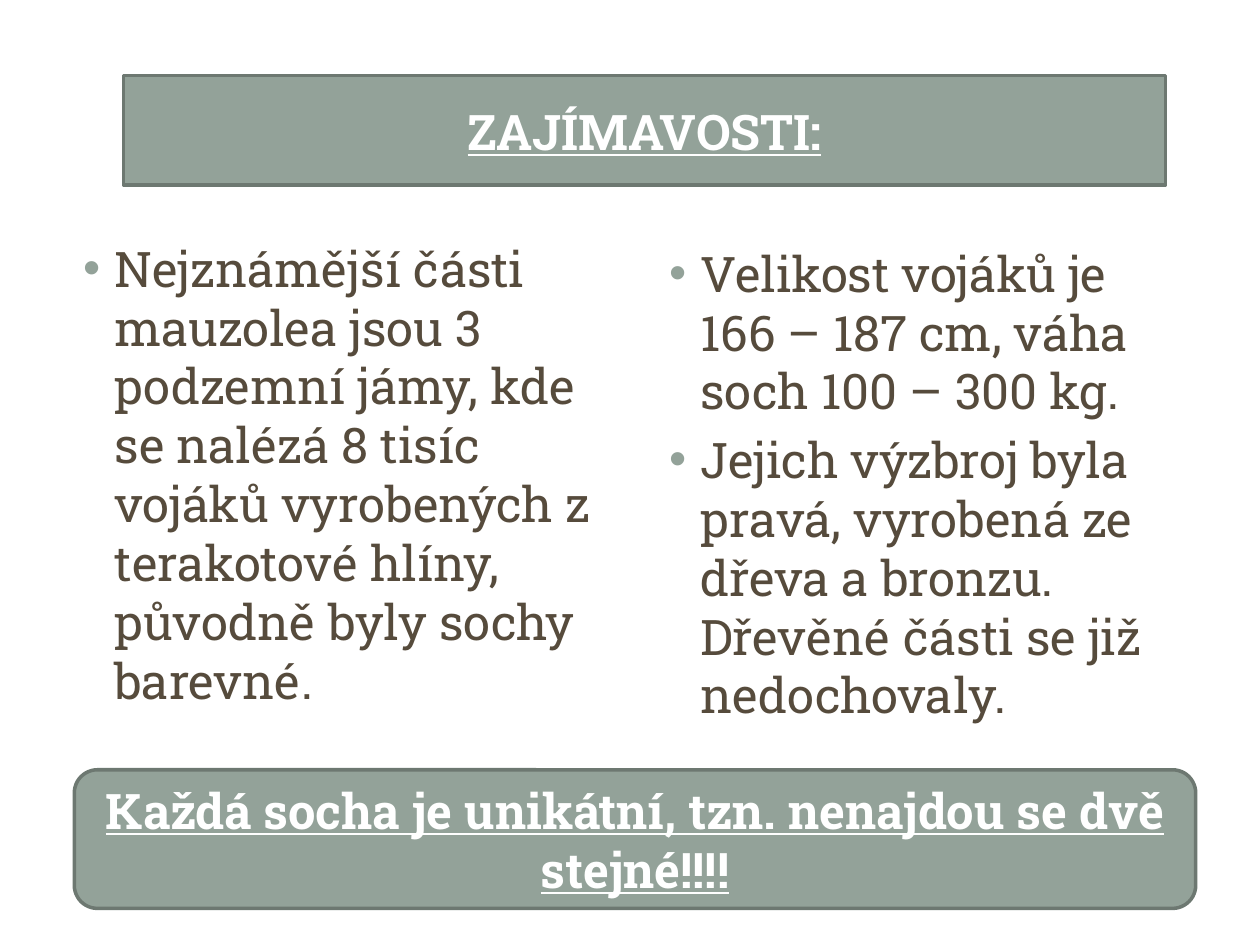
from lxml import etree
from pptx import Presentation
from pptx.dml.color import RGBColor
from pptx.enum.shapes import MSO_SHAPE
from pptx.enum.text import MSO_ANCHOR, MSO_AUTO_SIZE, PP_ALIGN
from pptx.oxml.ns import qn
from pptx.util import Inches, Pt

ROUNDED = MSO_SHAPE.ROUNDED_RECTANGLE
MIDDLE, TOP = MSO_ANCHOR.MIDDLE, MSO_ANCHOR.TOP
CENTER, LEFT = PP_ALIGN.CENTER, PP_ALIGN.LEFT
NO_AUTOFIT = MSO_AUTO_SIZE.NONE

FONT = "Roboto Slab"
SAGE, SAGE_DARK, BROWN, WHITE = "93A299", "6D7871", "564B3C", "FFFFFF"

TITLE_BOX = (0.98, 0.6, 8.27, 0.87)
LEFT_BOX = (0.43, 1.84, 4.42, 4.82)
RIGHT_BOX = (5.08, 1.88, 4.42, 4.82)
CONCLUSION_BOX = (0.59, 6.11, 8.9, 1.1)

LEFT_FACTS = [
    "Nejznámější části mauzolea jsou 3 podzemní jámy, kde se nalézá 8 tisíc "
    "vojáků vyrobených z terakotové hlíny, původně byly sochy barevné.",
]
RIGHT_FACTS = [
    "Velikost vojáků je 166 – 187 cm, váha soch 100 – 300 kg.",
    "Jejich výzbroj byla pravá, vyrobená ze dřeva a bronzu. "
    "Dřevěné části se již nedochovaly.",
]


def color(hex_value):
    return RGBColor.from_string(hex_value)


def place(shape, box):
    shape.left, shape.top, shape.width, shape.height = map(Inches, box)


def set_font(paragraph, hex_value, emphasis=False):
    font = paragraph.font
    font.name, font.size = FONT, Pt(28)
    font.color.rgb = color(hex_value)
    font.bold = font.underline = emphasis


def round_corners(placeholder):
    """Give a placeholder the rounded rectangle outline."""
    properties = placeholder._element.spPr
    geometry = etree.SubElement(properties, qn("a:prstGeom"), prst="roundRect")
    etree.SubElement(geometry, qn("a:avLst"))


def fill_banner(shape, text):
    shape.fill.solid()
    shape.fill.fore_color.rgb = color(SAGE)
    shape.line.color.rgb = color(SAGE_DARK)
    shape.line.width = Pt(2)
    frame = shape.text_frame
    frame.text = text
    frame.word_wrap = True
    frame.auto_size = NO_AUTOFIT
    frame.vertical_anchor = MIDDLE
    paragraph = frame.paragraphs[0]
    paragraph.alignment = CENTER
    set_font(paragraph, WHITE, emphasis=True)


def add_title(slide, box, text):
    title = slide.shapes.title
    place(title, box)
    round_corners(title)
    fill_banner(title, text)


def add_conclusion(slide, box, text):
    banner = slide.shapes.add_shape(ROUNDED, *map(Inches, box))
    banner.shadow.inherit = False
    fill_banner(banner, text)


def set_bullet(paragraph):
    properties = paragraph._p.get_or_add_pPr()
    properties.set("marL", str(Inches(0.38)))
    properties.set("indent", str(Inches(-0.25)))
    bullet_color = etree.SubElement(properties, qn("a:buClr"))
    etree.SubElement(bullet_color, qn("a:srgbClr"), val=SAGE)
    etree.SubElement(properties, qn("a:buFont"), typeface="Arial")
    etree.SubElement(properties, qn("a:buChar"), char="•")


def fill_facts(placeholder, box, facts):
    place(placeholder, box)
    frame = placeholder.text_frame
    frame.text = "\n".join(facts)
    frame.word_wrap = True
    frame.auto_size = NO_AUTOFIT
    frame.vertical_anchor = TOP
    for paragraph in frame.paragraphs:
        paragraph.alignment = LEFT
        set_bullet(paragraph)
        set_font(paragraph, BROWN)


def main():
    presentation = Presentation()
    presentation.slide_width, presentation.slide_height = Inches(10), Inches(7.5)
    two_content_layout = presentation.slide_layouts[3]
    slide = presentation.slides.add_slide(two_content_layout)

    add_title(slide, TITLE_BOX, "ZAJÍMAVOSTI:")
    fill_facts(slide.placeholders[1], LEFT_BOX, LEFT_FACTS)
    fill_facts(slide.placeholders[2], RIGHT_BOX, RIGHT_FACTS)
    add_conclusion(slide, CONCLUSION_BOX,
                   "Každá socha je unikátní, tzn. nenajdou se dvě stejné!!!!")
    presentation.save("out.pptx")


if __name__ == "__main__":
    main()
